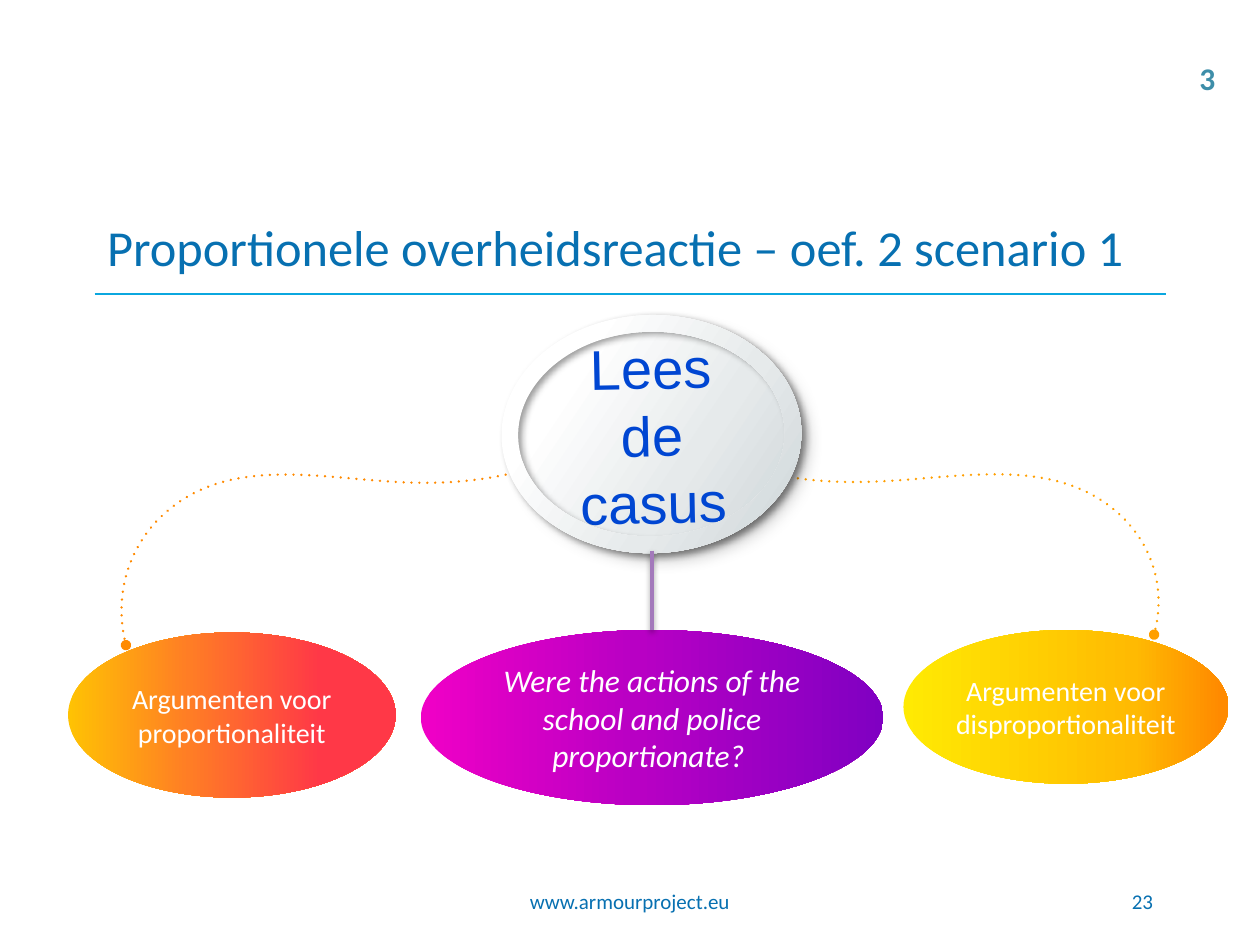
import dataclasses

import lxml.etree
import pptx
import pptx.dml.color
import pptx.enum.shapes
import pptx.enum.text
import pptx.oxml.ns
import pptx.util

SHAPE = pptx.enum.shapes.MSO_SHAPE
ALIGN = pptx.enum.text.PP_ALIGN
ANCHOR = pptx.enum.text.MSO_ANCHOR
qn = pptx.oxml.ns.qn


@dataclasses.dataclass(frozen=True)
class Theme:
    """Colours, gradients (position, colour), fonts and sizes."""
    heading: str = "0770B1"
    rule: str = "0BA7DF"
    corner: str = "3E8EA9"
    casus: str = "0046D2"
    white: str = "FFFFFF"
    stem: str = "A379BB"
    left_curve: str = "FF8A00"
    right_curve: str = "FF9F00"
    red: tuple = ((0, "FFC203"), (37, "FF7D25"), (77, "FF3847"))
    yellow: tuple = ((0, "FFEA03"), (71, "FFBA02"), (98, "FF8A00"))
    purple: tuple = ((0, "F000C6"), (47, "B800C4"), (100, "8000C2"))
    silver: tuple = ((23, "FFFFFF"), (63, "E6EAEB"), (100, "CDD5D8"))
    font: str = "Calibri"
    casus_font: str = "Arial"
    title_size: float = 28.8
    casus_size: float = 32
    question_size: float = 18
    label_size: float = 16
    footer_size: float = 12


THEME = Theme()
COLUMNS, ROWS = 40, 30  # quarter-inch grid over the slide

# Left curve: start point followed by Bezier triples, in grid cells
CURVE = [(16.68, 14.92),
         (15.48, 15.24), (14.28, 15.36), (13.04, 15.32),
         (10.24, 15.24), (7.08, 14.32), (4.96, 16.56),
         (4, 17.6), (3.64, 19.08), (4, 20.48)]
MIRROR_SUM = 40.64      # left x + right x
RIGHT_STRETCH = 0.94    # the right curve drops slightly less


def cells(*counts):
    return [pptx.util.Inches(count / 4) for count in counts]


def rgb(colour):
    return pptx.dml.color.RGBColor.from_string(colour)


def add_child(parent, tag, **attributes):
    child = lxml.etree.SubElement(parent, qn(tag))
    for name, value in attributes.items():
        child.set(name, str(value))
    return child


def set_text(shape, text, size, colour, align=ALIGN.CENTER, anchor=ANCHOR.MIDDLE,
             inset=None, wrap=True, **font_values):
    frame = shape.text_frame
    frame.text = text
    frame_values = {"word_wrap": wrap, "vertical_anchor": anchor,
                    "auto_size": pptx.enum.text.MSO_AUTO_SIZE.NONE}
    if inset is not None:
        for side in ("left", "top", "right", "bottom"):
            frame_values["margin_" + side] = pptx.util.Inches(inset)
    for name, value in frame_values.items():
        setattr(frame, name, value)
    paragraph = frame.paragraphs[0]
    paragraph.alignment = align
    values = {"name": THEME.font, "size": pptx.util.Pt(size), **font_values}
    for name, value in values.items():
        setattr(paragraph.font, name, value)
    paragraph.font.color.rgb = rgb(colour)


def add_text(slide, box, text, size, colour, **options):
    set_text(slide.shapes.add_textbox(*cells(*box)), text, size, colour, **options)


def add_shadow(effects, alpha, blur, distance, angle):
    shadow = add_child(effects, "a:outerShdw", blurRad=pptx.util.Pt(blur),
                       dist=pptx.util.Pt(distance), dir=angle * 60000,
                       algn="tl", rotWithShape=0)
    colour = add_child(shadow, "a:srgbClr", val="000000")
    add_child(colour, "a:alpha", val=alpha * 1000)


def add_gradient_shape(slide, kind, box, stops, angle=0, shadow=None):
    shape = slide.shapes.add_shape(kind, *cells(*box))
    shape.line.fill.background()
    shape.fill.gradient()
    shape.fill.gradient_angle = (360 - angle) % 360
    properties = shape._element.spPr
    stop_list = properties.find(".//" + qn("a:gsLst"))
    stop_list.clear()
    for position, colour in stops:
        stop = add_child(stop_list, "a:gs", pos=position * 1000)
        add_child(stop, "a:srgbClr", val=colour)
    shape.shadow.inherit = False
    if shadow:
        add_shadow(properties.find(qn("a:effectLst")), *shadow)
    return shape


def add_line(slide, start, end, colour, width, shadow=None):
    line = slide.shapes.add_connector(
        pptx.enum.shapes.MSO_CONNECTOR.STRAIGHT, *cells(*start, *end))
    line.line.color.rgb = rgb(colour)
    line.line.width = pptx.util.Pt(width)
    effects = add_child(line._element.spPr, "a:effectLst")
    if shadow:
        add_shadow(effects, *shadow)
    return line


def add_dotted_curve(slide, points, colour):
    # The freeform joins the knots; each segment then becomes a Bezier curve
    knots = [cells(*point) for point in points[::3]]
    builder = slide.shapes.build_freeform(*knots[0])
    builder.add_line_segments(knots[1:], close=False)
    curve = builder.convert_to_shape()
    segments = curve._element.spPr.findall(".//" + qn("a:lnTo"))
    for number, segment in enumerate(segments):
        segment.clear()
        segment.tag = qn("a:cubicBezTo")
        for point in points[3 * number + 1:3 * number + 4]:
            x, y = cells(*point)
            add_child(segment, "a:pt", x=x - curve.left, y=y - curve.top)

    curve.fill.background()
    curve.shadow.inherit = False
    curve.line.color.rgb = rgb(colour)
    curve.line.width = pptx.util.Pt(1.5)
    outline = curve._element.spPr.find(qn("a:ln"))
    outline.set("cap", "rnd")
    dashes = add_child(outline, "a:custDash")
    add_child(dashes, "a:ds", d=100000, sp=200000)
    for tag in ("a:headEnd", "a:tailEnd"):
        add_child(outline, tag, type="oval")


def add_bubble(slide, box, text, stops, size=THEME.label_size, **options):
    bubble = add_gradient_shape(slide, SHAPE.OVAL, box, stops)
    set_text(bubble, text, size, THEME.white, inset=0.04, **options)
    return bubble


def add_casus_disc(slide):
    disc = add_gradient_shape(slide, SHAPE.OVAL, (16.24, 10.2, 8.92, 7.16),
                              THEME.silver, 35, (38, 12, 7.1, 39))
    set_text(disc, "Lees de casus", THEME.casus_size, THEME.casus, inset=0.04,
             name=THEME.casus_font)
    ring = add_gradient_shape(slide, SHAPE.DONUT, (15.92, 10, 9.52, 7.56),
                              THEME.silver, 35, (38, 4, 2.8, 39))
    ring.adjustments[0] = 0.07
    disc.rotation = ring.rotation = 358.8
    slide.shapes.add_group_shape([disc, ring])


def main():
    presentation = pptx.Presentation()
    presentation.slide_width, presentation.slide_height = cells(COLUMNS, ROWS)
    slide = presentation.slides.add_slide(presentation.slide_layouts[5])

    # Heading and footer
    add_line(slide, (3, 9.33), (37, 9.33), THEME.rule, 1)
    title = slide.shapes.title
    title.left, title.top, title.width, title.height = cells(3, 6.32, 34, 3)
    set_text(title, "Proportionele overheidsreactie – oef. 2 scenario 1",
             THEME.title_size, THEME.heading, align=ALIGN.LEFT)
    add_text(slide, (15.33, 27.8, 9.33, 1.6), "www.armourproject.eu",
             THEME.footer_size, THEME.heading)
    add_text(slide, (28.68, 27.8, 8.32, 1.6), "23",
             THEME.footer_size, THEME.heading, align=ALIGN.RIGHT)

    # Arguments on both sides with their dotted curves
    add_bubble(slide, (2.16, 20.08, 10.4, 5.24), "Argumenten voor proportionaliteit", THEME.red)
    add_dotted_curve(slide, CURVE, THEME.left_curve)
    add_bubble(slide, (28.68, 20, 10.32, 4.88), "Argumenten voor disproportionaliteit",
               THEME.yellow)
    top = CURVE[0][1]
    right_curve = [(MIRROR_SUM - x, top + (y - top) * RIGHT_STRETCH) for x, y in CURVE]
    add_dotted_curve(slide, right_curve, THEME.right_curve)

    # Central question below the case
    question = add_bubble(slide, (13.36, 20, 14.68, 5.56),
                          "Were the actions of the school and police proportionate? ",
                          THEME.purple, THEME.question_size, italic=True)
    add_casus_disc(slide)
    stem = add_line(slide, (20.7, 17.48), (20.7, 20), THEME.stem, 2, (38, 3.1, 1.6, 90))
    stem.end_connect(question, 0)

    # Corner number
    add_text(slide, (37.68, 1.68, 1.32, 1.6), "3", THEME.question_size, THEME.corner,
             align=ALIGN.LEFT, anchor=ANCHOR.TOP, wrap=False, bold=True)

    presentation.save("out.pptx")


if __name__ == "__main__":
    main()
